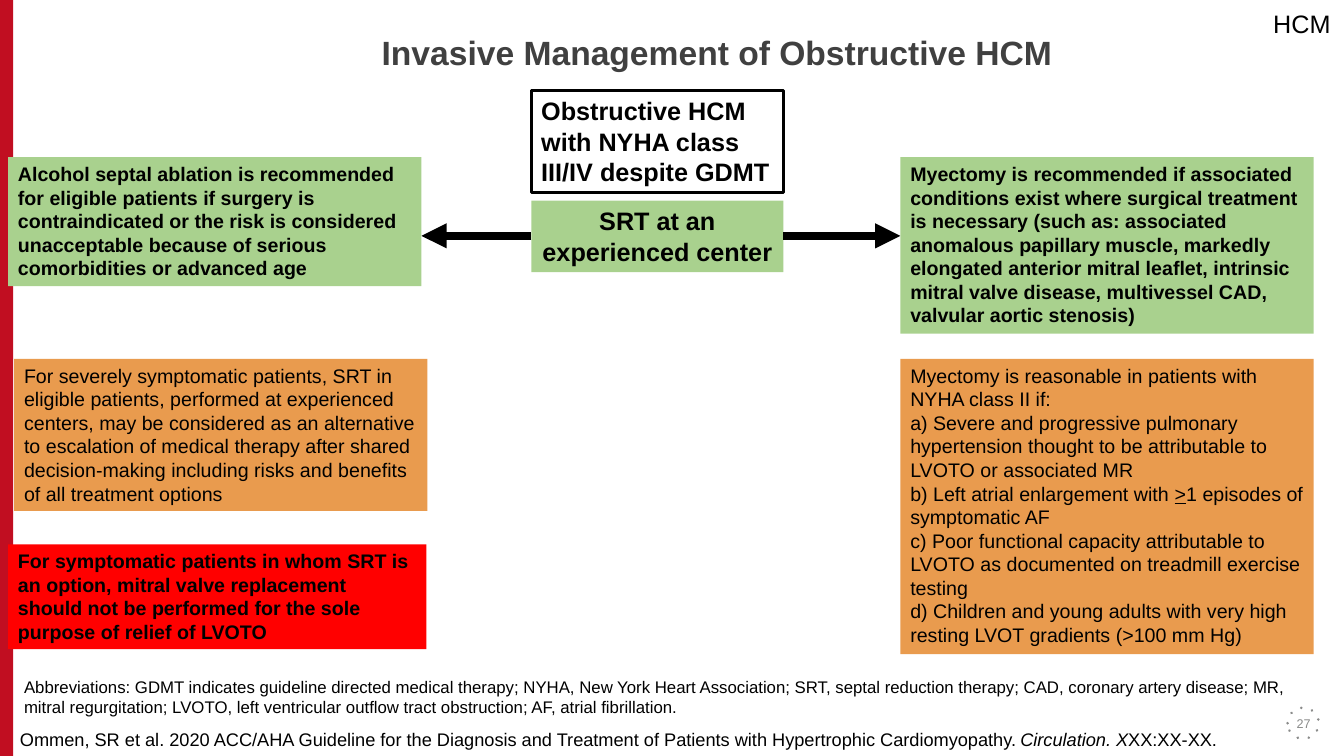
from lxml.etree import SubElement
from pptx import Presentation
from pptx.dml.color import RGBColor
from pptx.enum.shapes import MSO_CONNECTOR, MSO_SHAPE
from pptx.enum.text import MSO_ANCHOR, PP_ALIGN
from pptx.oxml.ns import qn
from pptx.util import Inches, Pt

WIDTH, HEIGHT = 13.33, 7.5
MARGIN = 0.14
CARD_WIDTH = 4.1
LEFT_COLUMN, CENTER_COLUMN, RIGHT_COLUMN = 0.08, 5.27, 8.93
CENTER_WIDTH = 2.5
FIRST_ROW, SECOND_ROW, THIRD_ROW = 1.56, 3.56, 5.4
ARROW_ROW = 2.34

BLACK = RGBColor(0x00, 0x00, 0x00)
CRIMSON = RGBColor(0xC1, 0x0E, 0x21)
CHARCOAL = RGBColor(0x40, 0x40, 0x40)
GRAY = RGBColor(0x8A, 0x8B, 0x8A)
GREEN = RGBColor(0xA9, 0xD1, 0x8E)
ORANGE = RGBColor(0xE9, 0x9B, 0x4E)
RED = RGBColor(0xFF, 0x00, 0x00)

ABLATION = (
    "Alcohol septal ablation is recommended for eligible patients if surgery is "
    "contraindicated or the risk is considered unacceptable because of serious "
    "comorbidities or advanced age"
)
ALTERNATIVE = (
    "For severely symptomatic patients, SRT in eligible patients, performed at "
    "experienced centers, may be considered as an alternative to escalation of "
    "medical therapy after shared decision-making including risks and benefits "
    "of all treatment options"
)
REPLACEMENT = (
    "For symptomatic patients in whom SRT is an option, mitral valve replacement "
    "should not be performed for the sole purpose of relief of LVOTO"
)
MYECTOMY = (
    "Myectomy is recommended if associated conditions exist where surgical "
    "treatment is necessary (such as: associated anomalous papillary muscle, "
    "markedly elongated anterior mitral leaflet, intrinsic mitral valve disease, "
    "multivessel CAD, valvular aortic stenosis)"
)
CLASS_TWO = (
    "Myectomy is reasonable in patients with NYHA class II if:",
    "a) Severe and progressive pulmonary hypertension thought to be attributable "
    "to LVOTO or associated MR",
    ("b) Left atrial enlargement with ", ">", "1 episodes of symptomatic AF"),
    "c) Poor functional capacity attributable to LVOTO as documented on treadmill "
    "exercise testing",
    "d) Children and young adults with very high resting LVOT gradients (>100 mm Hg)",
)
ABBREVIATIONS = (
    "Abbreviations: GDMT indicates guideline directed medical therapy; NYHA, New "
    "York Heart Association; SRT, septal reduction therapy; CAD, coronary artery "
    "disease; MR, mitral regurgitation; LVOTO, left ventricular outflow tract "
    "obstruction; AF, atrial fibrillation."
)
CITATION = (
    "Ommen, SR et al. 2020 ACC/AHA Guideline for the Diagnosis and Treatment of "
    "Patients with Hypertrophic Cardiomyopathy. ",
    "Circulation. X",
    "XX:XX-XX.",
)


def write(shape, paragraphs, size, color=BLACK, bold=False,
          align=PP_ALIGN.LEFT, anchor=MSO_ANCHOR.TOP):
    """Fill a shape with paragraphs, each a string or a tuple of runs."""
    frame = shape.text_frame
    frame.word_wrap = True
    frame.vertical_anchor = anchor
    for index, content in enumerate(paragraphs):
        para = frame.add_paragraph() if index else frame.paragraphs[0]
        para.alignment = align
        for text in (content,) if isinstance(content, str) else content:
            span = para.add_run()
            span.text = text
            span.font.name = "Arial"
            span.font.size = Pt(size)
            span.font.bold = bold
            span.font.color.rgb = color


def add_text(page, area, paragraphs, size, **style):
    """Add a plain text box."""
    box = page.shapes.add_textbox(*map(Inches, area))
    write(box, paragraphs, size, **style)
    return box


def add_panel(page, area, fill=None, line=None, weight=2.25, kind=MSO_SHAPE.RECTANGLE):
    """Add a flat shape with an optional fill and outline."""
    panel = page.shapes.add_shape(kind, *map(Inches, area))
    panel.shadow.inherit = False
    if fill is None:
        panel.fill.background()
    else:
        panel.fill.solid()
        panel.fill.fore_color.rgb = fill
    if line is None:
        panel.line.fill.background()
    else:
        panel.line.color.rgb = line
        panel.line.width = Pt(weight)
    return panel


def add_card(page, area, paragraphs, fill=None, line=None, size=14, **style):
    """Add a rectangle that holds text."""
    card = add_panel(page, area, fill, line)
    write(card, paragraphs, size, **style)
    return card


def add_arrow(page, start, end):
    """Add a thick horizontal arrow on the arrow row."""
    row = Inches(ARROW_ROW)
    arrow = page.shapes.add_connector(
        MSO_CONNECTOR.STRAIGHT, Inches(start), row, Inches(end), row)
    arrow.line.color.rgb = BLACK
    arrow.line.width = Pt(6)
    properties = arrow._element.spPr
    SubElement(properties.find(qn("a:ln")), qn("a:tailEnd"), type="triangle")
    SubElement(properties, qn("a:effectLst"))


def add_page_number(page, number):
    """Add the page number inside a dotted ring."""
    ring = add_panel(page, (12.77, 7.02, 0.31, 0.31), line=GRAY, weight=2,
                     kind=MSO_SHAPE.OVAL)
    outline = ring._element.spPr.find(qn("a:ln"))
    outline.set("cap", "rnd")
    SubElement(outline, qn("a:prstDash"), val="dot")
    add_text(page, (12.71, 6.98, 0.44, 0.39), [number], 9, color=GRAY,
             align=PP_ALIGN.CENTER, anchor=MSO_ANCHOR.MIDDLE)


def main():
    """Build the slide and save it."""
    deck = Presentation()
    deck.slide_width, deck.slide_height = Inches(WIDTH), Inches(HEIGHT)
    page = deck.slides.add_slide(deck.slide_layouts[6])

    add_panel(page, (0, 0, 0.13, HEIGHT), fill=CRIMSON)
    add_text(page, (WIDTH - 0.8, 0.03, 0.8, 0.4), ["HCM"], 18)
    citation = add_text(page, (0.1, 7.18, 13.06, 0.32), [CITATION], 13)
    citation.text_frame.paragraphs[0].runs[1].font.italic = True
    add_text(page, (2.45, 0.27, 9.32, 0.84),
             ["Invasive Management of Obstructive HCM"], 24,
             color=CHARCOAL, bold=True, align=PP_ALIGN.CENTER)

    add_card(page, (CENTER_COLUMN, 0.9, CENTER_WIDTH, 1.01),
             ["Obstructive HCM with NYHA class III/IV despite GDMT"],
             line=BLACK, size=18, bold=True)
    add_card(page, (CENTER_COLUMN, 1.99, CENTER_WIDTH, 0.71),
             ["SRT at an experienced center"], GREEN, size=18, bold=True,
             align=PP_ALIGN.CENTER)
    add_arrow(page, CENTER_COLUMN, LEFT_COLUMN + CARD_WIDTH)
    add_arrow(page, CENTER_COLUMN + CENTER_WIDTH, RIGHT_COLUMN)

    add_card(page, (LEFT_COLUMN, FIRST_ROW, CARD_WIDTH, 1.28), [ABLATION], GREEN, bold=True)
    add_card(page, (MARGIN, SECOND_ROW, CARD_WIDTH, 1.51), [ALTERNATIVE], ORANGE)
    add_card(page, (LEFT_COLUMN, THIRD_ROW, 4.15, 1.04), [REPLACEMENT], RED, bold=True)
    add_card(page, (RIGHT_COLUMN, FIRST_ROW, CARD_WIDTH, 1.75), [MYECTOMY], GREEN, bold=True)
    criteria = add_card(page, (RIGHT_COLUMN, SECOND_ROW, CARD_WIDTH, 2.93), CLASS_TWO, ORANGE)
    criteria.text_frame.paragraphs[2].runs[1].font.underline = True

    add_text(page, (MARGIN, 6.66, 12.97, 0.5), [ABBREVIATIONS], 12)
    add_page_number(page, "27")
    deck.save("out.pptx")


if __name__ == "__main__":
    main()
